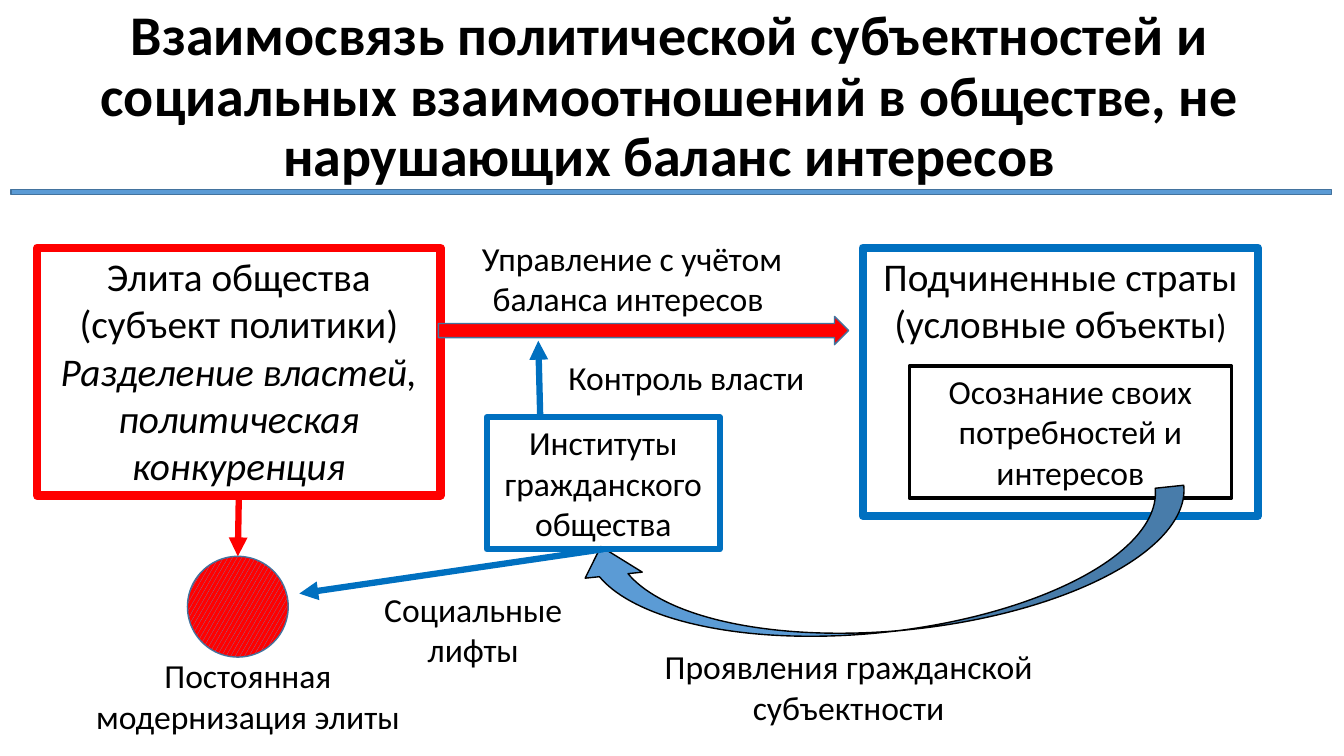
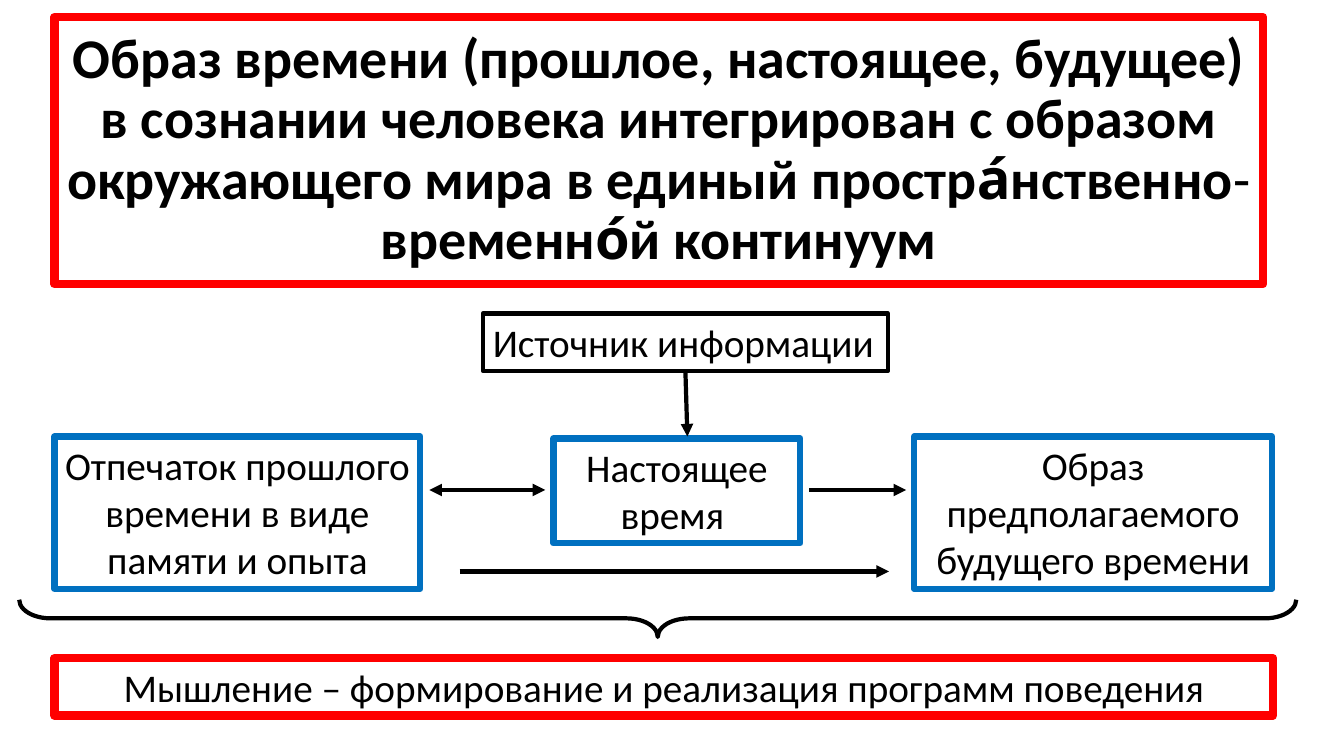
from lxml import etree
from pptx import Presentation
from pptx.dml.color import RGBColor
from pptx.enum.dml import MSO_PATTERN
from pptx.enum.shapes import MSO_CONNECTOR, MSO_SHAPE
from pptx.enum.text import MSO_ANCHOR, MSO_AUTO_SIZE, PP_ALIGN
from pptx.oxml.ns import qn
from pptx.util import Pt

# Shared style
FONT = "Calibri"
TITLE_SIZE, LARGE, SMALL = 40, 28, 24
THICK, MEDIUM, THIN, HAIRLINE = 6, 4.5, 3, 1

BLACK = RGBColor(0x00, 0x00, 0x00)
RED = RGBColor(0xFF, 0x00, 0x00)
BLUE = RGBColor(0x00, 0x70, 0xC0)
LIGHT_BLUE = RGBColor(0x5B, 0x9B, 0xD5)
EDGE_BLUE = RGBColor(0x43, 0x73, 0x9E)

RECTANGLE = MSO_SHAPE.RECTANGLE
OVAL = MSO_SHAPE.OVAL
RIGHT_ARROW = MSO_SHAPE.RIGHT_ARROW
CURVED_ARROW = MSO_SHAPE.CURVED_LEFT_ARROW
BRACE = MSO_SHAPE.RIGHT_BRACE
STRAIGHT = MSO_CONNECTOR.STRAIGHT
CONFETTI = MSO_PATTERN.LARGE_CONFETTI
CENTER, LEFT = PP_ALIGN.CENTER, PP_ALIGN.LEFT
TOP, MIDDLE = MSO_ANCHOR.TOP, MSO_ANCHOR.MIDDLE
GROW, FIXED = MSO_AUTO_SIZE.SHAPE_TO_FIT_TEXT, MSO_AUTO_SIZE.NONE
TOP_SIDE, BOTTOM_SIDE = 0, 2


def write(shape, runs, size, align=CENTER, anchor=TOP, wrap=True, fit=GROW):
    """Fill a shape with one paragraph; runs is a string or (text, font changes) pairs."""
    frame = shape.text_frame
    frame.word_wrap = wrap
    frame.auto_size = fit
    frame.vertical_anchor = anchor
    paragraph = frame.paragraphs[0]
    paragraph.alignment = align
    paragraph.font.name = FONT
    paragraph.font.size = Pt(size)
    paragraph.font.color.rgb = BLACK
    for text, changes in [(runs, {})] if isinstance(runs, str) else runs:
        run = paragraph.add_run()
        run.text = text
        for attribute, value in changes.items():
            setattr(run.font, attribute, value)
    return paragraph


def figure(slide, kind, box, line, weight, fill=None, rotation=0, adjustments=()):
    """Add a preset shape without a shadow."""
    shape = slide.shapes.add_shape(kind, *map(Pt, box))
    shape.shadow.inherit = False
    shape.rotation = rotation
    for index, value in enumerate(adjustments):
        shape.adjustments[index] = value
    if fill is None:
        shape.fill.background()
    else:
        shape.fill.solid()
        shape.fill.fore_color.rgb = fill
    shape.line.color.rgb = line
    shape.line.width = Pt(weight)
    return shape


def framed(slide, box, runs, line, weight, size=LARGE, **layout):
    shape = figure(slide, RECTANGLE, box, line, weight)
    write(shape, runs, size, **layout)
    return shape


def label(slide, box, text, **layout):
    write(slide.shapes.add_textbox(*map(Pt, box)), text, SMALL, **layout)


def title(slide, box, runs, line=None):
    if line is None:
        shape = slide.shapes.add_textbox(*map(Pt, box))
    else:
        shape = figure(slide, RECTANGLE, box, line, THICK)
    paragraph = write(shape, runs, TITLE_SIZE, anchor=MIDDLE, fit=FIXED)
    paragraph.font.bold = True
    paragraph.line_spacing = 0.9


def arrow(slide, start, end, color, weight, both_ends=False):
    """Draw a straight arrow with a triangle at its end, or at both ends."""
    connector = slide.shapes.add_connector(STRAIGHT, *map(Pt, (*start, *end)))
    connector.line.color.rgb = color
    connector.line.width = Pt(weight)
    line = connector.line._get_or_add_ln()
    for tag in ("a:headEnd", "a:tailEnd") if both_ends else ("a:tailEnd",):
        etree.SubElement(line, qn(tag), type="triangle")
    etree.SubElement(connector._element.spPr, qn("a:effectLst"))
    return connector


def build_interests_slide(slide):
    title(slide, (17.3, 21.6, 921.6, 97.2),
          "Взаимосвязь политической субъектностей и социальных "
          "взаимоотношений в обществе, не нарушающих баланс интересов")

    # Elite and subordinate strata
    elite = framed(slide, (26.6, 177, 288, 177), [
        ("Элита общества (субъект политики) ", {}),
        ("Разделение властей, политическая конкуренция", {"italic": True}),
    ], RED, THICK)
    framed(slide, (616.3, 177, 282.2, 191.5), [
        ("Подчиненные страты (условные объекты", {}),
        (")", {"size": Pt(SMALL)}),
    ], BLUE, THICK)
    framed(slide, (649.4, 261.4, 230.4, 94.3),
           "Осознание своих потребностей и интересов", BLACK, 2.25, SMALL)

    # Government and civic feedback
    figure(slide, RIGHT_ARROW, (313.2, 226, 293, 20.2), EDGE_BLUE, HAIRLINE, RED)
    figure(slide, CURVED_ARROW, (590.4, 190.8, 82.1, 439.2), BLACK, HAIRLINE,
           LIGHT_BLUE, 84, (0.25, 0.5, 0.26))
    label(slide, (440.6, 458, 331.2, 65.5), "Проявления гражданской субъектности")
    label(slide, (44.6, 464.4, 265, 65.5), "Постоянная модернизация элиты")
    label(slide, (324.7, 166.3, 253.4, 65.5), "Управление с учётом баланса интересов ")

    # Civil institutions and elite renewal
    institutions = framed(slide, (347.8, 298, 166.3, 94.3),
                          "Институты гражданского общества", BLUE, MEDIUM, SMALL)
    label(slide, (262.8, 416.9, 150.5, 65.5), "Социальные лифты")
    renewal = figure(slide, OVAL, (133.9, 397.4, 72, 72), EDGE_BLUE, HAIRLINE)
    renewal.fill.patterned()
    renewal.fill.pattern = CONFETTI
    renewal.fill.fore_color.rgb = LIGHT_BLUE
    renewal.fill.back_color.rgb = RED

    arrow(slide, (385.9, 298), (384.5, 243.4), BLUE, MEDIUM)
    lifts = arrow(slide, (431, 392.3), (213.8, 424), BLUE, MEDIUM)
    lifts.begin_connect(institutions, BOTTOM_SIDE)
    modernization = arrow(slide, (170.6, 354), (169.9, 397.4), RED, MEDIUM)
    modernization.begin_connect(elite, BOTTOM_SIDE)
    modernization.end_connect(renewal, TOP_SIDE)

    # Band under the title
    figure(slide, RECTANGLE, (7.9, 135.4, 943.2, 3.6), EDGE_BLUE, HAIRLINE, LIGHT_BLUE)
    label(slide, (398.9, 251.3, 190, 36), "Контроль власти", align=LEFT, wrap=False)


def build_time_slide(slide):
    title(slide, (38.9, 12.2, 863.3, 190.8), [
        ("Образ времени (прошлое, настоящее, будущее) в сознании человека "
         "интегрирован с образом окружающего мира в единый простра́нственно", {}),
        ("-", {"bold": False}),
        ("временно́й континуум", {}),
    ], RED)

    # Information source and the three times
    source = framed(slide, (344.9, 223.9, 289.4, 41), "Источник информации ",
                    BLACK, THIN, align=LEFT, wrap=False)
    for box, text in (
        ((395.3, 313.2, 176.4, 74.9), "Настоящее время "),
        ((38.9, 311.8, 261.4, 108.7), "Отпечаток прошлого времени в виде памяти и опыта"),
        ((653, 311.8, 255.6, 108.7), "Образ предполагаемого будущего времени"),
    ):
        framed(slide, box, text, BLUE, MEDIUM)

    # Links between them
    inflow = arrow(slide, (489.6, 265), (491, 311.8), BLACK, THIN)
    inflow.begin_connect(source, BOTTOM_SIDE)
    for left, right, y, both_ends in (
        (578.2, 647.3, 350, False),
        (306.7, 389.5, 350, True),
        (328.3, 635, 408.2, False),
    ):
        arrow(slide, (left, y), (right, y), BLACK, THIN, both_ends)

    # Summary under the brace
    figure(slide, BRACE, (456.5, -14.4, 26.6, 912.2), BLACK, THIN,
           rotation=90, adjustments=(0.84, 0.5))
    framed(slide, (38.9, 470.2, 870.5, 41),
           "Мышление – формирование и реализация программ поведения", RED, THICK)


def main():
    presentation = Presentation()
    presentation.slide_width, presentation.slide_height = Pt(960), Pt(540)
    blank = presentation.slide_layouts[6]
    for build in (build_interests_slide, build_time_slide):
        build(presentation.slides.add_slide(blank))
    presentation.save("out.pptx")


if __name__ == "__main__":
    main()
